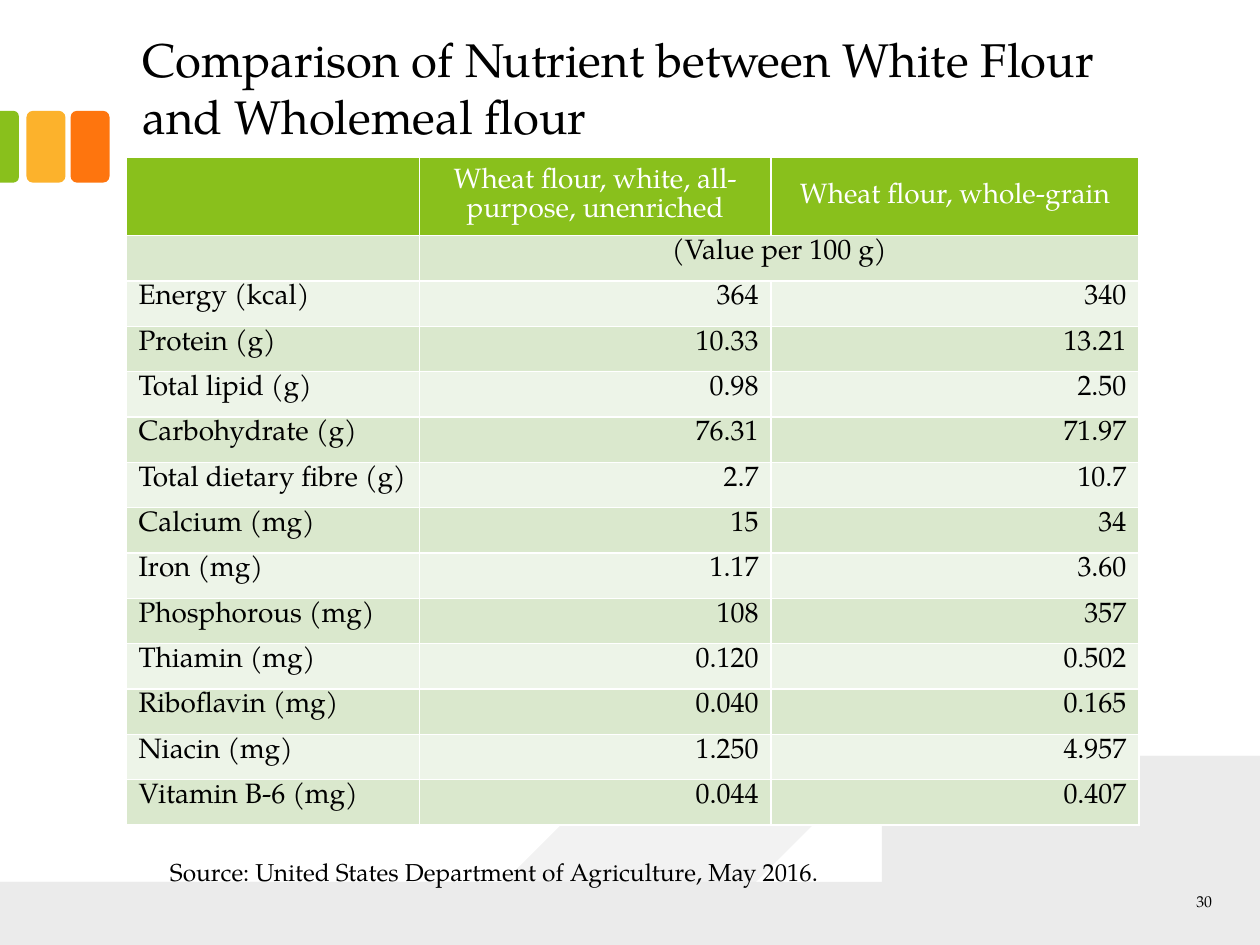
"""Build a slide comparing the nutrients of white and wholemeal flour."""
from dataclasses import dataclass

import lxml.etree
import pptx
import pptx.dml.color
import pptx.enum.shapes
import pptx.enum.text
import pptx.oxml.ns
import pptx.util

WIDTH, HEIGHT = pptx.util.Inches(10), pptx.util.Inches(7.5)
FONT = "TeX Gyre Pagella"
COLORS = {
    "black": "000000", "white": "FFFFFF", "green": "89C01C", "yellow": "FCB22C",
    "orange": "FE750E", "band": "DAE8CD", "pale": "EDF4E8",
}
ALIGN = pptx.enum.text.PP_ALIGN
ANCHOR = pptx.enum.text.MSO_ANCHOR
PRESET = pptx.enum.shapes.MSO_SHAPE


@dataclass
class Box:
    """Position and size in inches on the 10 by 7.5 grid."""
    left: float
    top: float
    width: float
    height: float

    def emu(self) -> tuple:
        """Return the four lengths as slide units."""
        return tuple(pptx.util.Inches(v) for v in (self.left, self.top, self.width, self.height))


@dataclass
class Wave:
    """A closed outline whose points either end lines or, in threes, curves."""
    start: tuple
    segments: list
    opacity: int


@dataclass
class Tab:
    """A rounded tab at the left edge."""
    box: Box
    preset: int
    color: str
    rotation: int = 0
    adjustments: tuple = ()


@dataclass
class Nutrient:
    """One nutrient with its value in each flour."""
    name: str
    white: str
    whole: str


WAVES = [
    Wave((10, 6.18), [[(10, 7.5)], [(0, 7.5)], [(0, 6.75)],
                      [(2.64, 6.83), (7.82, 6.55), (10, 6.18)]], 8),
    Wave((10, 5.92), [[(10, 6.12)], [(9.42, 6.23), (8.62, 6.33), (7.72, 6.41)],
                      [(5.23, 6.63), (1.93, 6.77), (0, 6.71)], [(0, 6.57)],
                      [(4.89, 6.62), (7.28, 6.27), (10, 5.92)]], 5),
]
TABS = [
    Tab(Box(0.56, 0.88, 0.31, 0.57), PRESET.ROUNDED_RECTANGLE, "orange"),
    Tab(Box(0.21, 0.88, 0.31, 0.57), PRESET.ROUNDED_RECTANGLE, "yellow"),
    Tab(Box(-0.21, 1.09, 0.57, 0.15), PRESET.ROUND_2_SAME_RECTANGLE, "green", 90, (0.292, 0)),
]
HEADINGS = ["", "Wheat flour, white, all-purpose, unenriched", "Wheat flour, whole-grain"]
NUTRIENTS = [
    Nutrient("Energy (kcal)", "364", "340"),
    Nutrient("Protein (g)", "10.33", "13.21"),
    Nutrient("Total lipid (g)", "0.98", "2.50"),
    Nutrient("Carbohydrate (g)", "76.31", "71.97"),
    Nutrient("Total dietary fibre (g)", "2.7", "10.7"),
    Nutrient("Calcium (mg)", "15", "34"),
    Nutrient("Iron (mg)", "1.17", "3.60"),
    Nutrient("Phosphorous (mg)", "108", "357"),
    Nutrient("Thiamin (mg)", "0.120", "0.502"),
    Nutrient("Riboflavin (mg)", "0.040", "0.165"),
    Nutrient("Niacin (mg)", "1.250", "4.957"),
    Nutrient("Vitamin B-6 (mg)", "0.044", "0.407"),
]
COLUMN_WIDTHS = [2.33, 2.79, 2.92]
HEADER_HEIGHT, ROW_HEIGHT = 0.62, 0.36


def rgb(color: str) -> pptx.dml.color.RGBColor:
    """Look up a named colour."""
    return pptx.dml.color.RGBColor.from_string(COLORS[color])


def paint(shape, color: str) -> None:
    """Give a shape a plain fill without line or shadow."""
    shape.shadow.inherit = False
    shape.line.fill.background()
    shape.fill.solid()
    shape.fill.fore_color.rgb = rgb(color)


def write(frame, text: str, size: float, color: str = "black", align=ALIGN.LEFT):
    """Write one formatted paragraph and return it."""
    frame.text = text
    paragraph = frame.paragraphs[0]
    paragraph.alignment = align
    font = paragraph.font
    font.name, font.size, font.bold = FONT, pptx.util.Pt(size), False
    font.color.rgb = rgb(color)
    return paragraph


def set_frame(frame, anchor, side: float, end: float) -> None:
    """Wrap a text frame and set its anchor and insets."""
    frame.word_wrap = True
    frame.vertical_anchor = anchor
    frame.margin_left = frame.margin_right = pptx.util.Inches(side)
    frame.margin_top = frame.margin_bottom = pptx.util.Inches(end)


def curve(start: tuple, first: tuple, second: tuple, end: tuple, steps: int = 24) -> list:
    """Sample a cubic curve after its start point."""
    shares = [step / steps for step in range(1, steps + 1)]
    return [tuple((1 - t) ** 3 * a + 3 * (1 - t) ** 2 * t * b + 3 * (1 - t) * t ** 2 * c + t ** 3 * d
                  for a, b, c, d in zip(start, first, second, end)) for t in shares]


def draw_wave(slide, wave: Wave) -> None:
    """Draw a translucent wave."""
    points = [wave.start]
    for segment in wave.segments:
        points += curve(points[-1], *segment) if len(segment) == 3 else segment
    builder = slide.shapes.build_freeform(*wave.start, scale=pptx.util.Inches(1))
    builder.add_line_segments(points[1:], close=True)
    shape = builder.convert_to_shape()
    paint(shape, "black")
    qn = pptx.oxml.ns.qn
    tint = shape.fill.fore_color and shape.element.spPr.find(qn("a:solidFill")).find(qn("a:srgbClr"))
    lxml.etree.SubElement(tint, qn("a:alpha")).set("val", str(wave.opacity * 1000))


def draw_tab(slide, tab: Tab) -> None:
    """Draw one tab."""
    shape = slide.shapes.add_shape(tab.preset, *tab.box.emu())
    shape.rotation = tab.rotation
    for index, value in enumerate(tab.adjustments):
        shape.adjustments[index] = value
    paint(shape, tab.color)


def draw_title(slide, text: str, box: Box) -> None:
    """Move and fill the title placeholder."""
    title = slide.shapes.title
    title.left, title.top, title.width, title.height = box.emu()
    set_frame(title.text_frame, ANCHOR.TOP, 0.13, 0.07)
    write(title.text_frame, text, 27)


def draw_table(slide, left: float, top: float) -> None:
    """Draw the nutrient table."""
    rows = [HEADINGS, ["", "(Value per 100 g)", ""]]
    rows += [[n.name, n.white, n.whole] for n in NUTRIENTS]
    box = Box(left, top, sum(COLUMN_WIDTHS), HEADER_HEIGHT + ROW_HEIGHT * (len(rows) - 1))
    table = slide.shapes.add_table(len(rows), len(COLUMN_WIDTHS), *box.emu()).table
    for column, width in zip(table.columns, COLUMN_WIDTHS):
        column.width = pptx.util.Inches(width)
    for r, texts in enumerate(rows):
        header = r == 0
        table.rows[r].height = pptx.util.Inches(HEADER_HEIGHT if header else ROW_HEIGHT)
        for c, text in enumerate(texts):
            cell = table.cell(r, c)
            cell.fill.solid()
            cell.fill.fore_color.rgb = rgb("green" if header else "band" if r % 2 else "pale")
            cell.vertical_anchor = ANCHOR.MIDDLE if header else ANCHOR.TOP
            cell.margin_top = cell.margin_bottom = pptx.util.Inches(0.02)
            align = ALIGN.CENTER if r < 2 else ALIGN.RIGHT if c else ALIGN.LEFT
            line = write(cell.text_frame, text, 16, "white" if header else "black", align)
            line.line_spacing = pptx.util.Pt(16.6)
    table.cell(1, 1).merge(table.cell(1, 2))


def draw_note(slide, text: str, box: Box, size: float, align, anchor, insets: tuple) -> None:
    """Draw a small line of text."""
    frame = slide.shapes.add_textbox(*box.emu()).text_frame
    set_frame(frame, anchor, *insets)
    write(frame, text, size, align=align)


def main() -> None:
    """Build and save the slide."""
    deck = pptx.Presentation()
    deck.slide_width, deck.slide_height = WIDTH, HEIGHT
    slide = deck.slides.add_slide(deck.slide_layouts[5])
    for wave in WAVES:
        draw_wave(slide, wave)
    for tab in TABS:
        draw_tab(slide, tab)
    draw_title(slide, "Comparison of Nutrient between White Flour and Wholemeal flour",
               Box(1, 0.17, 8, 1.42))
    draw_table(slide, 1, 1.25)
    draw_note(slide, "30", Box(9.08, 7.05, 0.67, 0.2), 9, ALIGN.RIGHT, ANCHOR.MIDDLE, (0.13, 0.07))
    draw_note(slide, "Source: United States Department of Agriculture, May 2016.",
              Box(1.25, 6.75, 7.75, 0.34), 14, ALIGN.LEFT, ANCHOR.TOP, (0.1, 0.05))
    deck.save("out.pptx")


if __name__ == "__main__":
    main()
